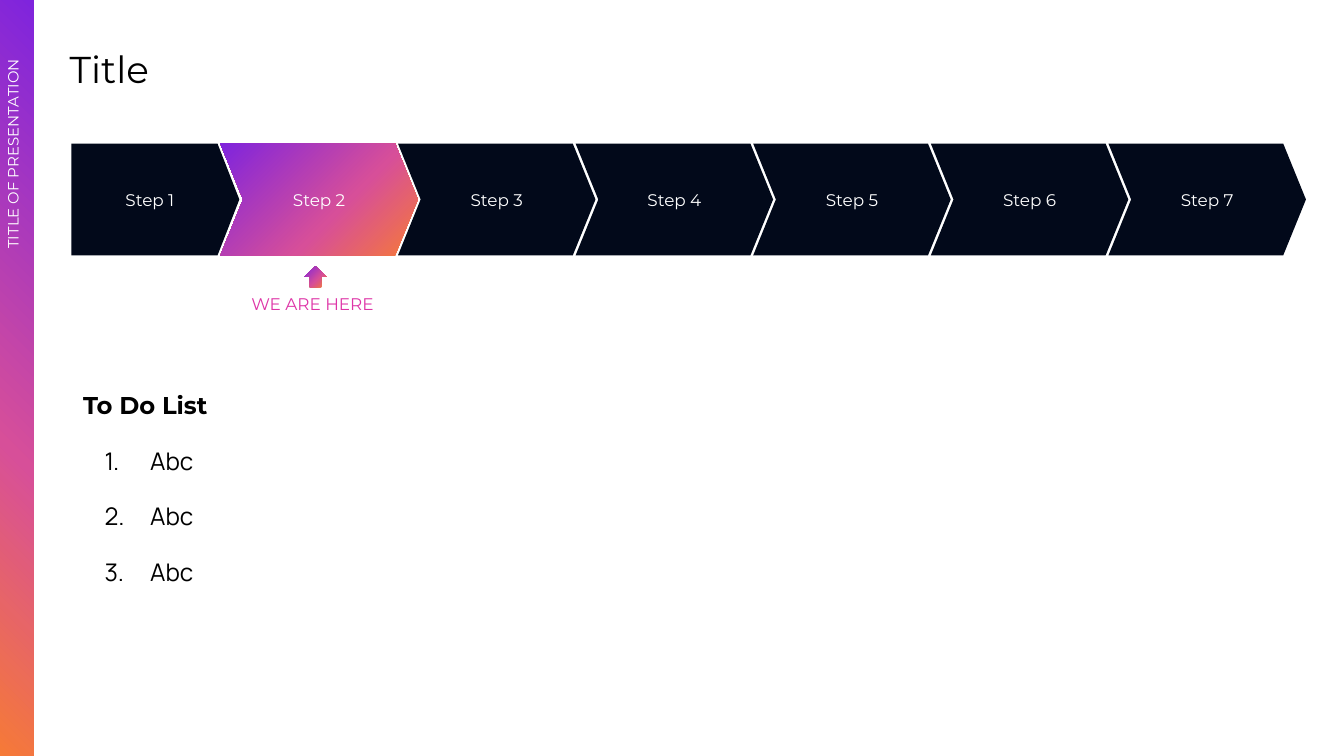
from copy import deepcopy

from lxml.etree import SubElement
from pptx import Presentation
from pptx.dml.color import RGBColor
from pptx.enum.shapes import MSO_SHAPE as Shape
from pptx.enum.text import MSO_ANCHOR as Anchor, MSO_AUTO_SIZE as AutoSize, PP_ALIGN as Align
from pptx.oxml.ns import qn
from pptx.util import Pt

TITLE = "Title"
SIDE_TITLE = "TITLE OF PRESENTATION"
STEPS = [f"Step {number}" for number in range(1, 8)]
CURRENT_STEP = "Step 2"
MARKER = "WE ARE HERE"
TODO_HEADING = "To Do List"
TODO_ITEMS = ["Abc", "Abc", "Abc"]

COLORS = {"black": "000000", "white": "FFFFFF", "navy": "02091A", "pink": "DE34A7"}
GRADIENT = [(0, "F67A37"), (0.4, "D74F99"), (1, "7F24DD")]
HEADING_FONT, BODY_FONT = "Montserrat", "Manrope"
INSET = 7.2

STEP_TOP, STEP_HEIGHT = 77, 59.8
FIRST_LEFT, FIRST_WIDTH = 38.2, 90
CHEVRON_LEFT, CHEVRON_WIDTH, CHEVRON_PITCH = 118.1, 105.8, 95.15


def style_run(paragraph, size, color, font=HEADING_FONT, bold=False):
    for run in paragraph.runs:
        run.font.size = Pt(size)
        run.font.name = font
        run.font.bold = bold
        run.font.color.rgb = RGBColor.from_string(COLORS[color])


def prepare_frame(shape, anchor=Anchor.TOP):
    frame = shape.text_frame
    frame.word_wrap = True
    frame.vertical_anchor = anchor
    frame.margin_left = frame.margin_right = Pt(INSET)
    frame.margin_top = frame.margin_bottom = Pt(INSET)
    return frame


def write_line(shape, text, size, color, align=Align.LEFT, anchor=Anchor.TOP):
    frame = prepare_frame(shape, anchor)
    frame.text = text
    frame.paragraphs[0].alignment = align
    style_run(frame.paragraphs[0], size, color)


def add_box(slide, left, top, width, height):
    return slide.shapes.add_textbox(Pt(left), Pt(top), Pt(width), Pt(height))


def add_filled(slide, kind, left, top, width, height, color=None, angle=None):
    """Add a shape without outline, with a plain colour or the gradient at an angle."""
    shape = slide.shapes.add_shape(kind, Pt(left), Pt(top), Pt(width), Pt(height))
    shape.shadow.inherit = False
    shape.line.fill.background()
    if color:
        shape.fill.solid()
        shape.fill.fore_color.rgb = RGBColor.from_string(COLORS[color])
        return shape
    shape.fill.gradient()
    shape.fill.gradient_angle = angle
    stop_list = shape.element.spPr.find(".//" + qn("a:gsLst"))
    stop_list.insert(1, deepcopy(stop_list[0]))
    for stop, (position, stop_color) in zip(shape.fill.gradient_stops, GRADIENT):
        stop.position = position
        stop.color.rgb = RGBColor.from_string(stop_color)
    return shape


def add_steps(slide):
    for index, step in enumerate(STEPS):
        if index == 0:
            kind, left, width, point = Shape.PENTAGON, FIRST_LEFT, FIRST_WIDTH, 0.195
        else:
            left = CHEVRON_LEFT + (index - 1) * CHEVRON_PITCH
            kind, width, point = Shape.CHEVRON, CHEVRON_WIDTH, 0.203
        color = None if step == CURRENT_STEP else "navy"
        shape = add_filled(slide, kind, left, STEP_TOP, width, STEP_HEIGHT, color, 135)
        shape.adjustments[0] = point
        write_line(shape, step, 9, "white", Align.CENTER, Anchor.MIDDLE)


def number_paragraph(paragraph):
    properties = paragraph._p.get_or_add_pPr()
    properties.set("marL", str(Pt(36)))
    properties.set("indent", str(Pt(-24.5)))
    bullet_color = SubElement(properties, qn("a:buClr"))
    SubElement(bullet_color, qn("a:srgbClr"), val=COLORS["black"])
    SubElement(properties, qn("a:buFont"), typeface=BODY_FONT)
    SubElement(properties, qn("a:buAutoNum"), type="arabicPeriod")


def add_todo_list(slide):
    frame = prepare_frame(add_box(slide, 37.4, 199.4, 654.5, 178.6))
    frame.text = TODO_HEADING
    heading = frame.paragraphs[0]
    heading.line_spacing = 1.15
    style_run(heading, 13, "black", bold=True)
    for item in TODO_ITEMS:
        paragraph = frame.add_paragraph()
        paragraph.text = item
        paragraph.line_spacing = 1.15
        paragraph.space_before = Pt(12)
        style_run(paragraph, 13, "black", BODY_FONT)
        number_paragraph(paragraph)
    paragraph.space_after = Pt(12)


def main():
    presentation = Presentation()
    presentation.slide_width, presentation.slide_height = Pt(720), Pt(405)
    slide = presentation.slides.add_slide(presentation.slide_layouts[6])

    write_line(add_box(slide, 30.2, 17.3, 671, 40.3), TITLE, 20, "black")
    add_filled(slide, Shape.RECTANGLE, 0, 0, 18, 405, angle=45)
    add_steps(slide)

    marker = add_box(slide, 114.5, 151.9, 105.8, 25.2)
    write_line(marker, MARKER, 9, "pink", Align.CENTER)
    marker.text_frame.auto_size = AutoSize.SHAPE_TO_FIT_TEXT

    add_todo_list(slide)

    side_title = add_box(slide, -162.7, 184.3, 344.2, 24.5)
    side_title.rotation = 270
    write_line(side_title, SIDE_TITLE, 8, "white", Align.RIGHT)
    side_title.text_frame.auto_size = AutoSize.SHAPE_TO_FIT_TEXT

    add_filled(slide, Shape.UP_ARROW, 163.1, 142.6, 11.9, 11.2, angle=135)
    presentation.save("out.pptx")


if __name__ == "__main__":
    main()
